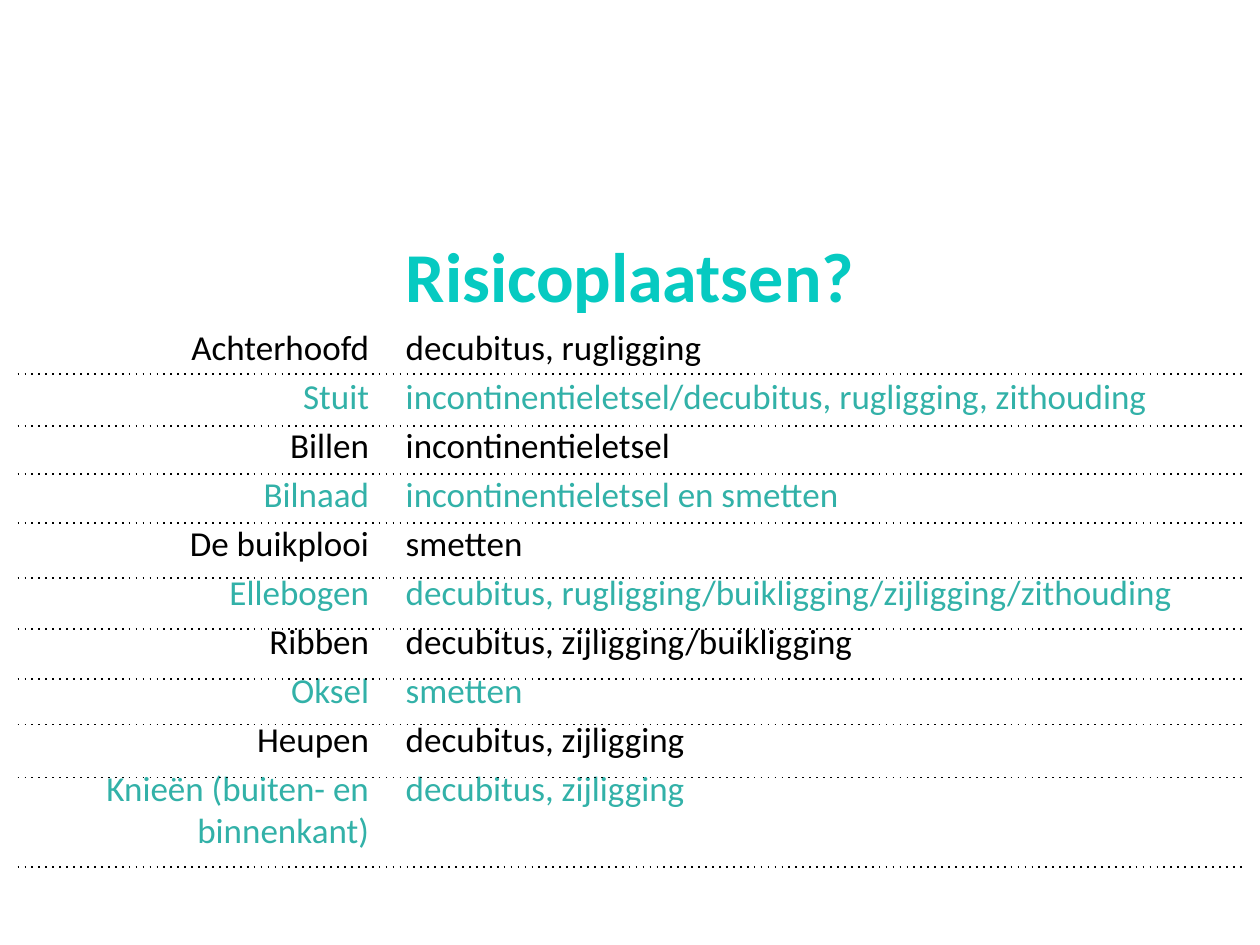
from dataclasses import dataclass
from typing import NamedTuple

from lxml.etree import SubElement
from pptx import Presentation
from pptx.dml.color import RGBColor
from pptx.enum.dml import MSO_LINE
from pptx.enum.shapes import MSO_CONNECTOR
from pptx.enum.text import MSO_ANCHOR, MSO_AUTO_SIZE, PP_ALIGN
from pptx.oxml.ns import qn
from pptx.util import Inches, Pt


@dataclass(frozen=True)
class Theme:
    font: str = "Calibri"
    head: RGBColor = RGBColor(0x06, 0xCA, 0xC1)
    ink: RGBColor = RGBColor(0, 0, 0)
    teal: RGBColor = RGBColor(0x32, 0xB1, 0xA8)
    big: Pt = Pt(40)
    text: Pt = Pt(20)
    rule: Pt = Pt(1)


class Box(NamedTuple):
    left: float
    top: float
    width: float
    height: float


class Row(NamedTuple):
    place: str
    risk: str
    line: float


THEME = Theme()
LEFT, RIGHT = 0.14, 9.87
ROWS = [
    Row("Achterhoofd", "decubitus, rugligging", 2.97),
    Row("Stuit", "incontinentieletsel/decubitus, rugligging, zithouding", 3.38),
    Row("Billen", "incontinentieletsel", 3.76),
    Row("Bilnaad", "incontinentieletsel en smetten", 4.15),
    Row("De buikplooi", "smetten", 4.59),
    Row("Ellebogen", "decubitus, rugligging/buikligging/zijligging/zithouding", 4.99),
    Row("Ribben", "decubitus, zijligging/buikligging", 5.39),
    Row("Oksel", "smetten", 5.75),
    Row("Heupen", "decubitus, zijligging", 6.17),
    Row("Knieën (buiten- en binnenkant)", "decubitus, zijligging", 6.88),
]


def move(shape, box: Box) -> None:
    shape.left, shape.top, shape.width, shape.height = map(Inches, box)
    shape.text_frame.word_wrap = True
    shape.text_frame.auto_size = MSO_AUTO_SIZE.NONE


def add_run(para, text: str, size: Pt, color: RGBColor, bold: bool = False) -> None:
    run = para.add_run()
    run.text = text
    run.font.name = THEME.font
    run.font.size = size
    run.font.bold = bold
    run.font.color.rgb = color


def fill_list(shape, box: Box, items: list[str], align: PP_ALIGN) -> None:
    move(shape, box)
    frame = shape.text_frame
    frame.vertical_anchor = MSO_ANCHOR.TOP
    for i, item in enumerate(items):
        para = frame.add_paragraph() if i else frame.paragraphs[0]
        props = para._p.get_or_add_pPr()
        props.set("marL", "0")
        props.set("indent", "0")
        SubElement(props, qn("a:buNone"))
        para.alignment = align
        if i == 0:
            para.space_before = Pt(0)
        add_run(para, item, THEME.text, THEME.teal if i % 2 else THEME.ink)


def add_rule(slide, y: float) -> None:
    rule = slide.shapes.add_connector(
        MSO_CONNECTOR.STRAIGHT, Inches(LEFT), Inches(y), Inches(RIGHT), Inches(y))
    rule.line.color.rgb = THEME.ink
    rule.line.width = THEME.rule
    rule.line.dash_style = MSO_LINE.ROUND_DOT
    props = rule._element.spPr
    props.find(".//" + qn("a:prstDash")).set("val", "dot")
    SubElement(props, qn("a:effectLst"))


def main() -> None:
    deck = Presentation()
    deck.slide_width, deck.slide_height = Inches(10), Inches(7.5)
    slide = deck.slides.add_slide(deck.slide_layouts[3])
    title, places, risks = slide.placeholders

    move(title, Box(0.5, 1.55, 9, 1.25))
    title.text_frame.vertical_anchor = MSO_ANCHOR.MIDDLE
    para = title.text_frame.paragraphs[0]
    para.alignment = PP_ALIGN.CENTER
    add_run(para, "Risicoplaatsen?", THEME.big, THEME.head, True)

    fill_list(places, Box(0.5, 2.53, 2.53, 4.17),
              [row.place for row in ROWS], PP_ALIGN.RIGHT)
    fill_list(risks, Box(3.12, 2.53, 6.72, 4.17),
              [row.risk for row in ROWS], PP_ALIGN.LEFT)
    for row in ROWS:
        add_rule(slide, row.line)
    deck.save("out.pptx")


if __name__ == "__main__":
    main()
